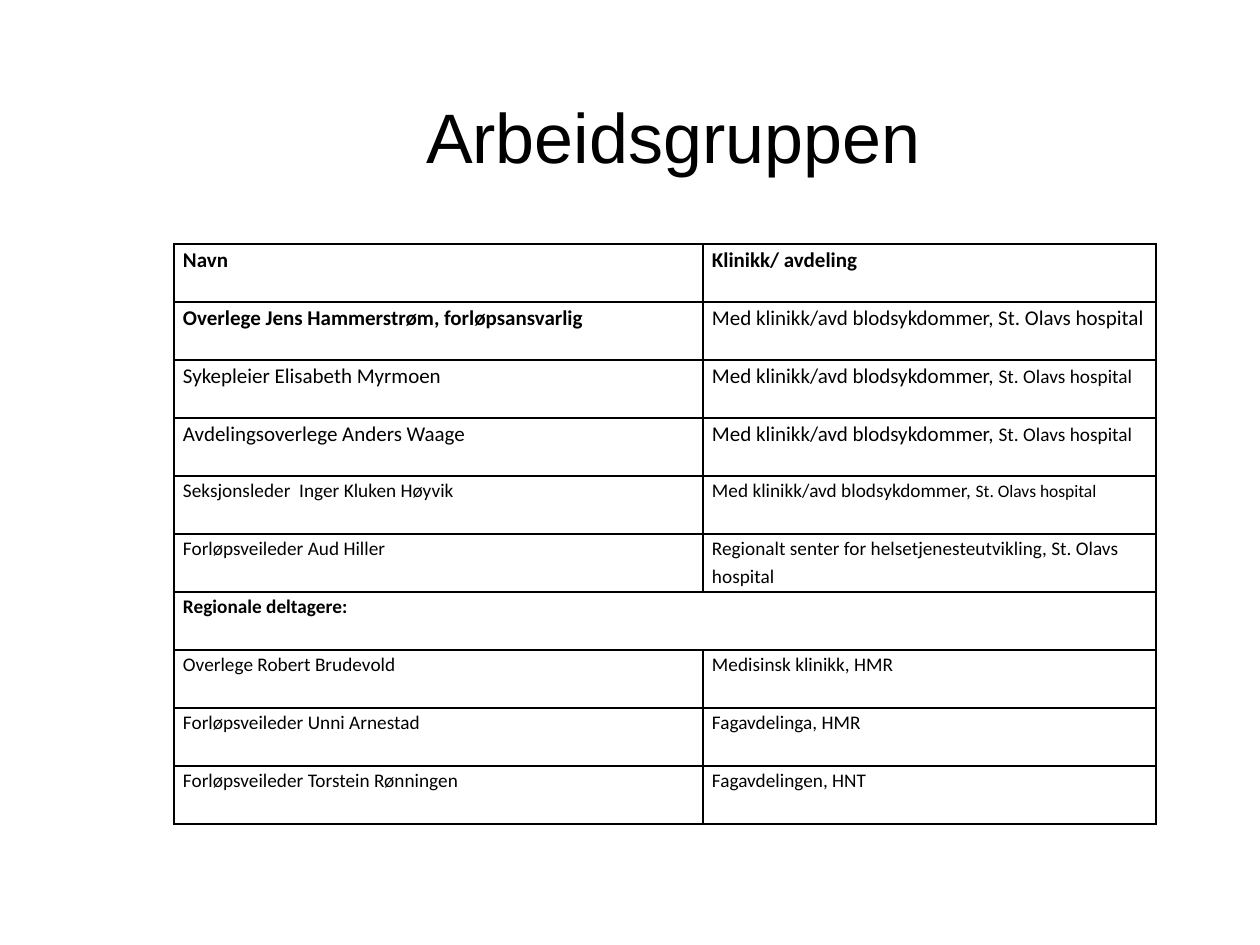
import pptx
import pptx.util
import pptx.dml.color
import pptx.enum.text
import pptx.oxml
import pptx.oxml.ns

PX = 914400 / 126
BLACK = pptx.dml.color.RGBColor(0, 0, 0)
BLACK_HEX = "000000"
HOSPITAL = "St. Olavs hospital"
BLOOD_CLINIC = "Med klinikk/avd blodsykdommer, "


def px(length):
    return pptx.util.Emu(round(length * PX))


def add_text(paragraph, text, size=11, bold=False, font="Calibri"):
    run = paragraph.add_run()
    run.text = text
    run.font.name = font
    run.font.size = pptx.util.Pt(size)
    run.font.bold = bold
    run.font.color.rgb = BLACK


members = [
    ([("Navn", 12, True)], [("Klinikk/ avdeling", 12, True)]),
    ([("Overlege Jens Hammerstrøm, forløpsansvarlig", 12, True)],
     [(BLOOD_CLINIC + HOSPITAL, 12, False)]),
    ([("Sykepleier Elisabeth Myrmoen", 12, False)],
     [(BLOOD_CLINIC, 12, False), (HOSPITAL, 11, False)]),
    ([("Avdelingsoverlege Anders Waage", 12, False)],
     [(BLOOD_CLINIC, 12, False), (HOSPITAL, 11, False)]),
    ([("Seksjonsleder  Inger Kluken Høyvik", 11, False)],
     [(BLOOD_CLINIC, 11, False), (HOSPITAL, 10, False)]),
    ([("Forløpsveileder Aud Hiller", 11, False)],
     [("Regionalt senter for helsetjenesteutvikling, " + HOSPITAL, 11, False)]),
    ([("Regionale deltagere:", 11, True)], []),
    ([("Overlege Robert Brudevold", 11, False)], [("Medisinsk klinikk, HMR", 11, False)]),
    ([("Forløpsveileder Unni Arnestad", 11, False)], [("Fagavdelinga, HMR", 11, False)]),
    ([("Forløpsveileder Torstein Rønningen", 11, False)], [("Fagavdelingen, HNT", 11, False)]),
]
column_widths = [529, 453]
row_height = 58

deck = pptx.Presentation()
deck.slide_width, deck.slide_height = px(1260), px(945)
slide = deck.slides.add_slide(deck.slide_layouts[5])

heading = slide.shapes.title
heading.left, heading.top, heading.width, heading.height = px(174), px(66), px(998), px(139)
heading.text_frame.vertical_anchor = pptx.enum.text.MSO_ANCHOR.MIDDLE
heading_line = heading.text_frame.paragraphs[0]
heading_line.alignment = pptx.enum.text.PP_ALIGN.CENTER
add_text(heading_line, "Arbeidsgruppen", size=40, font="Arial")

workgroup = slide.shapes.add_table(
    len(members), len(column_widths), px(174), px(244),
    px(sum(column_widths)), px(row_height * len(members))).table
workgroup.first_row = False
workgroup.horz_banding = False
for column, width in zip(workgroup.columns, column_widths):
    column.width = px(width)

for row_index, member in enumerate(members):
    workgroup.rows[row_index].height = px(row_height)
    for column_index, pieces in enumerate(member):
        cell = workgroup.cell(row_index, column_index)
        cell.margin_left = cell.margin_right = px(9)
        cell.margin_top = cell.margin_bottom = 0
        cell.vertical_anchor = pptx.enum.text.MSO_ANCHOR.TOP
        properties = cell._tc.get_or_add_tcPr()
        for side in ("lnL", "lnR", "lnT", "lnB"):
            properties.append(pptx.oxml.parse_xml(
                f'<a:{side} {pptx.oxml.ns.nsdecls("a")} w="12700">'
                f'<a:solidFill><a:srgbClr val="{BLACK_HEX}"/></a:solidFill></a:{side}>'))
        cell.fill.background()
        paragraph = cell.text_frame.paragraphs[0]
        paragraph.line_spacing = 1.15
        for text, size, bold in pieces:
            add_text(paragraph, text, size=size, bold=bold)
    if not member[1]:
        workgroup.cell(row_index, 0).merge(workgroup.cell(row_index, 1))

deck.save("out.pptx")
